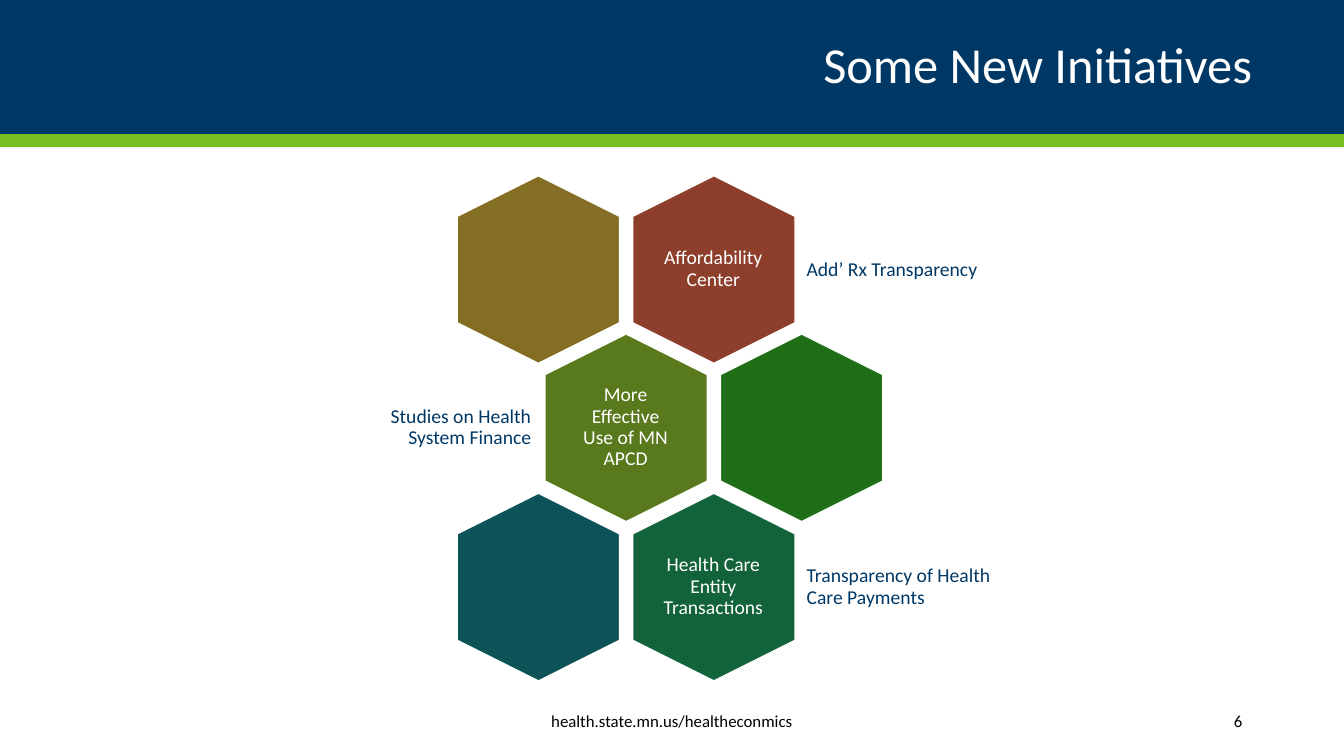
import pptx
import pptx.util
import pptx.dml.color
import pptx.enum.shapes
import pptx.enum.text

PX = 9144
COLORS = {
    "navy": "003865", "lime": "78BE21", "white": "FFFFFF", "black": "000000",
    "gold": "846E24", "rust": "8D3F2B", "olive": "59791D",
    "green": "1E6F17", "teal": "0D5257", "forest": "12633A",
}
SHAPE = pptx.enum.shapes.MSO_SHAPE
ALIGN = pptx.enum.text.PP_ALIGN

deck = pptx.Presentation()
deck.slide_width = 1333 * PX
deck.slide_height = 750 * PX
page = deck.slides.add_slide(deck.slide_layouts[6])


def add_filled(kind, area, color):
    shape = page.shapes.add_shape(kind, *[length * PX for length in area])
    shape.shadow.inherit = False
    shape.fill.solid()
    shape.fill.fore_color.rgb = pptx.dml.color.RGBColor.from_string(COLORS[color])
    shape.line.fill.background()
    return shape


def add_text(words, area, size, color, align, insets, spacing=1.0, after=0):
    box = page.shapes.add_textbox(*[length * PX for length in area])
    frame = box.text_frame
    frame.word_wrap = True
    frame.vertical_anchor = pptx.enum.text.MSO_ANCHOR.MIDDLE
    for side, inset in zip(("left", "top", "right", "bottom"), insets):
        setattr(frame, "margin_" + side, inset * PX)
    para = frame.paragraphs[0]
    paragraph_format = {"alignment": align, "line_spacing": spacing,
                        "space_after": pptx.util.Pt(after)}
    for name, value in paragraph_format.items():
        setattr(para, name, value)
    span = para.add_run()
    span.text = words
    for name, value in {"name": "Calibri", "size": pptx.util.Pt(size)}.items():
        setattr(span.font, name, value)
    span.font.color.rgb = pptx.dml.color.RGBColor.from_string(COLORS[color])


add_filled(SHAPE.RECTANGLE, (0, 0, 1333, 133), "navy")
add_filled(SHAPE.RECTANGLE, (0, 133, 1333, 13), "lime")
add_text("Some New Initiatives", (92, 0, 1150, 133), 36, "white",
         ALIGN.RIGHT, (0, 5, 0, 5), 0.9)

footer_insets = (10, 5, 10, 5)
add_text("health.state.mn.us/healtheconmics", (361, 695, 611, 40), 12, "black",
         ALIGN.CENTER, footer_insets)
add_text("6", (1082, 695, 160, 40), 12, "black", ALIGN.RIGHT, footer_insets)

label_insets = (6, 6, 6, 6)
honeycomb = [
    [("gold", ""), ("rust", "Affordability Center")],
    [("olive", "More Effective Use of MN APCD"), ("green", "")],
    [("teal", ""), ("forest", "Health Care Entity Transactions")],
]
side_notes = [
    ("Add’ Rx Transparency", 794, 207, ALIGN.LEFT),
    ("Studies on Health System Finance", 333, 200, ALIGN.RIGHT),
    ("Transparency of Health Care Payments", 794, 207, ALIGN.LEFT),
]
for row, (cells, side_note) in enumerate(zip(honeycomb, side_notes)):
    top = 187 + row * 315 // 2
    for column, (color, label) in enumerate(cells):
        left = 441 + column * 174 + row % 2 * 87
        hexagon = add_filled(SHAPE.HEXAGON, (left, top, 186, 161), color)
        hexagon.rotation = 90
        hexagon.adjustments[0] = 0.25
        hexagon.line.color.rgb = pptx.dml.color.RGBColor.from_string(COLORS["white"])
        hexagon.line.width = pptx.util.Pt(0.85)
        if label:
            add_text(label, (left + 37, top + 16, 111, 128), 14, "white",
                     ALIGN.CENTER, label_insets, 0.9, 5)
    note, left, width, align = side_note
    add_text(note, (left, top + 25, width, 111), 14, "navy",
             align, label_insets, 0.9, 5)

deck.save("out.pptx")
